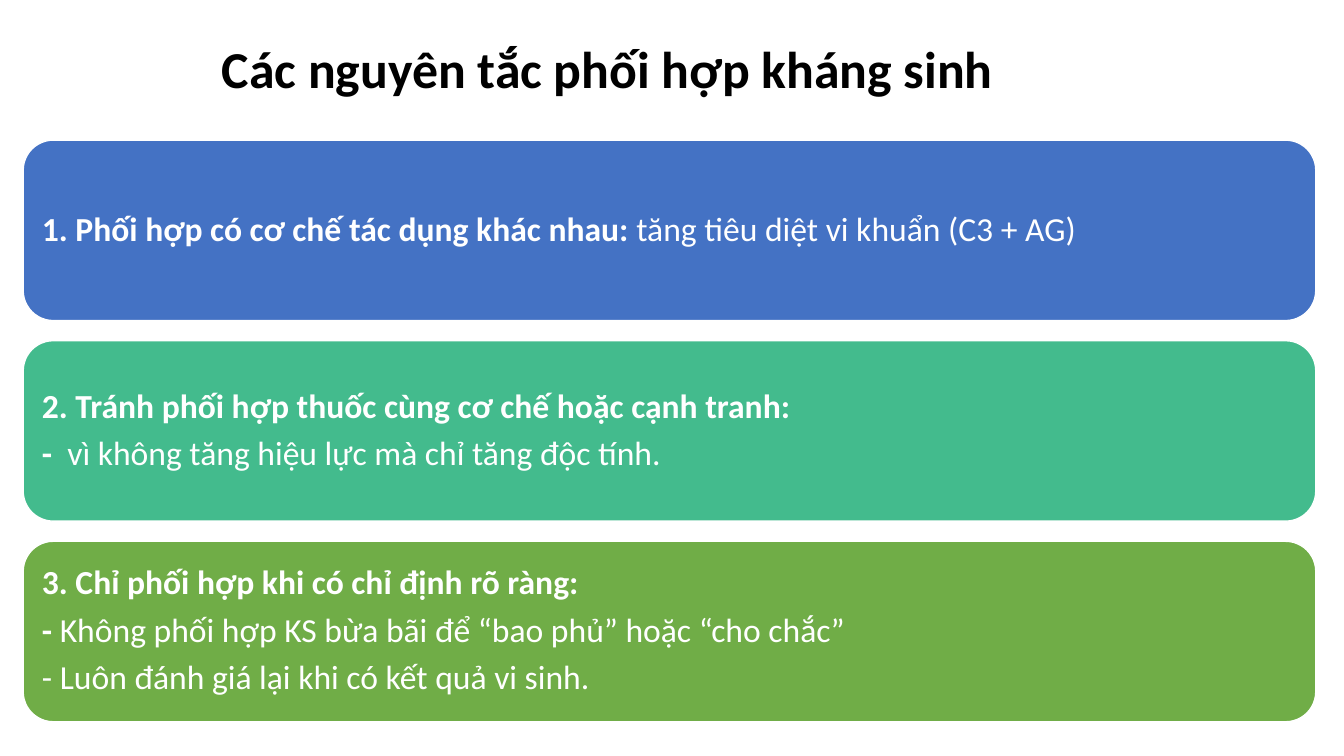
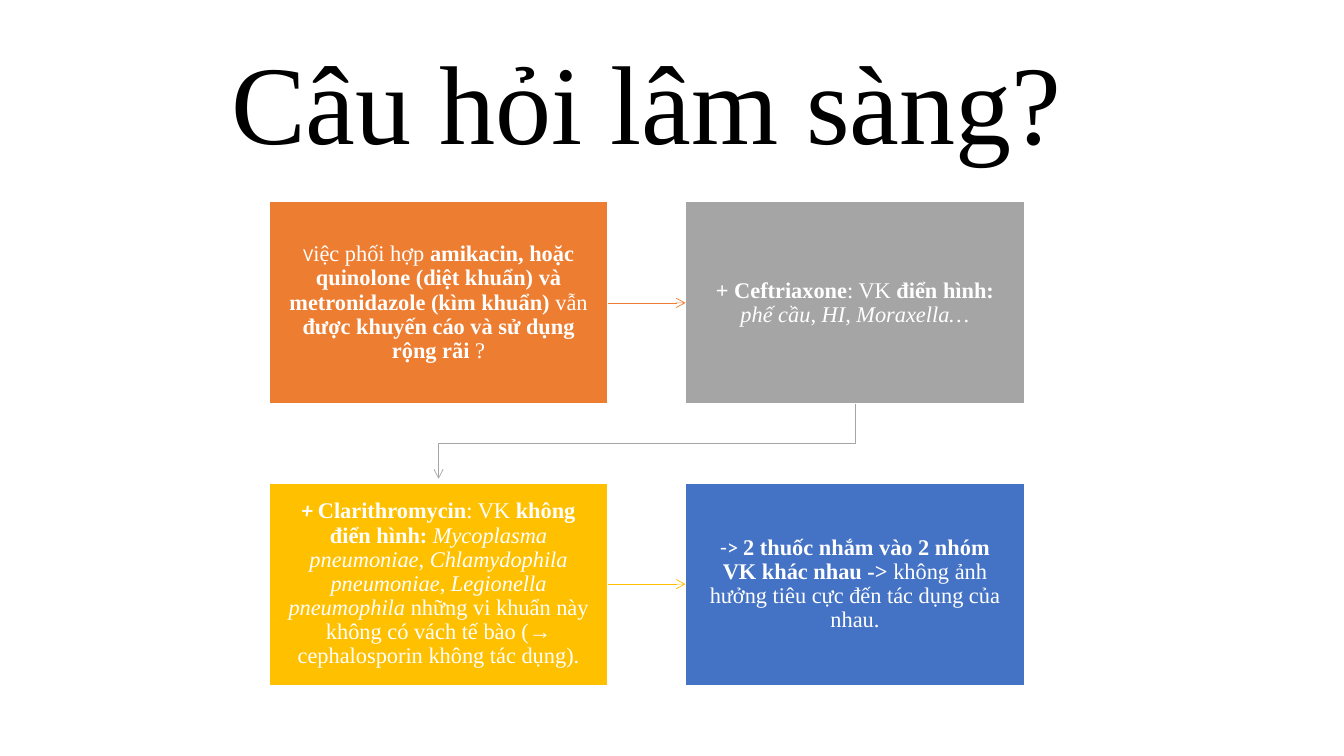
from lxml.etree import SubElement
from pptx import Presentation
from pptx.dml.color import RGBColor
from pptx.enum.shapes import MSO_CONNECTOR, MSO_SHAPE
from pptx.enum.text import MSO_ANCHOR, MSO_AUTO_SIZE, PP_ALIGN
from pptx.oxml.ns import qn
from pptx.util import Inches, Pt

COLORS = {
    "black": "000000",
    "white": "FFFFFF",
    "blue": "4472C4",
    "teal": "43BB8D",
    "green": "70AD47",
    "orange": "ED7D31",
    "gray": "A5A5A5",
    "gold": "FFC000",
}
SANS = "Calibri"
SERIF = "Times New Roman"
LINE_SPACING = 0.9


def color(name):
    return RGBColor.from_string(COLORS[name])


class Deck:
    def __init__(self):
        self.prs = Presentation()
        self.prs.slide_width = Inches(13.33)
        self.prs.slide_height = Inches(7.5)
        self.s = None

    def add_slide(self):
        self.s = self.prs.slides.add_slide(self.prs.slide_layouts[5])

    def style_run(self, r, font, size, name, bold=False, italic=False):
        r.font.name = font
        r.font.size = Pt(size)
        r.font.color.rgb = color(name)
        r.font.bold = bold
        r.font.italic = italic

    def title(self, text, box, font, size, bold=False,
              align=PP_ALIGN.CENTER, anchor=MSO_ANCHOR.MIDDLE):
        sp = self.s.shapes.title
        sp.left, sp.top, sp.width, sp.height = map(Inches, box)
        tf = sp.text_frame
        tf.text = text
        tf.word_wrap = True
        tf.auto_size = MSO_AUTO_SIZE.NONE
        tf.vertical_anchor = anchor
        p = tf.paragraphs[0]
        p.alignment = align
        p.line_spacing = LINE_SPACING
        self.style_run(p.runs[0], font, size, "black", bold)

    def card(self, preset, box, fill, paragraphs, font, size, align, margins):
        sp = self.s.shapes.add_shape(preset, *map(Inches, box))
        sp.shadow.inherit = False
        sp.fill.solid()
        sp.fill.fore_color.rgb = color(fill)
        sp.line.color.rgb = color("white")
        sp.line.width = Pt(1)
        tf = sp.text_frame
        tf.word_wrap = True
        tf.vertical_anchor = MSO_ANCHOR.MIDDLE
        tf.margin_left = tf.margin_right = Inches(margins[0])
        tf.margin_top = tf.margin_bottom = Inches(margins[1])
        for i, runs in enumerate(paragraphs):
            p = tf.add_paragraph() if i else tf.paragraphs[0]
            p.alignment = align
            p.line_spacing = LINE_SPACING
            p.space_after = Pt(round(size * 0.35))
            for text, flags in runs:
                r = p.add_run()
                r.text = text
                self.style_run(r, SANS if "c" in flags else font,
                               13 if "s" in flags else size,
                               "white", "b" in flags, "i" in flags)
        return sp

    def arrow_line(self, sp, name):
        sp.line.color.rgb = color(name)
        sp.line.width = Pt(0.5)
        SubElement(sp.line._get_or_add_ln(), qn("a:tailEnd"), type="arrow")

    def arrow(self, start, end, name):
        c = self.s.shapes.add_connector(MSO_CONNECTOR.STRAIGHT, 0, 0, 0, 0)
        c.begin_connect(start, 3)
        c.end_connect(end, 1)
        self.arrow_line(c, name)
        SubElement(c._element.spPr, qn("a:effectLst"))

    def path_arrow(self, points, name):
        start, *rest = [(Inches(x), Inches(y)) for x, y in points]
        builder = self.s.shapes.build_freeform(*start)
        builder.add_line_segments(rest, close=False)
        sp = builder.convert_to_shape()
        sp.fill.background()
        self.arrow_line(sp, name)
        sp.shadow.inherit = False


def principles_slide(deck):
    deck.add_slide()
    deck.title("Các nguyên tắc phối hợp kháng sinh", (2.1, 0.2, 9.13, 0.84),
               SANS, 37, True, PP_ALIGN.LEFT, MSO_ANCHOR.BOTTOM)
    principles = [
        ("blue", [[("1. Phối hợp có cơ chế tác dụng khác nhau: ", "b"),
                   ("tăng tiêu diệt vi khuẩn (C3 + AG)", "")]]),
        ("teal", [[("2. Tránh phối hợp thuốc cùng cơ chế hoặc cạnh tranh:", "b")],
                  [("-  ", "b"),
                   ("vì không tăng hiệu lực mà chỉ tăng độc tính.", "")]]),
        ("green", [[("3. Chỉ phối hợp khi có chỉ định rõ ràng:", "b")],
                   [("- ", "b"),
                    ("Không phối hợp KS bừa bãi để “bao phủ” hoặc “cho chắc”", "")],
                   [("- Luôn đánh giá lại khi có kết quả vi sinh.", "")]]),
    ]
    top, height, gap = 1.39, 1.79, 0.2
    for i, (fill, paragraphs) in enumerate(principles):
        box = (0.23, top + i * (height + gap), 12.82, height)
        deck.card(MSO_SHAPE.ROUNDED_RECTANGLE, box, fill, paragraphs,
                  SANS, 24, PP_ALIGN.LEFT, (0.1, 0.1))


def question_slide(deck):
    deck.add_slide()
    deck.title("Câu hỏi lâm sàng?", (1.3, 0.42, 10.23, 1.31), SERIF, 80)
    steps = [
        ("orange", [("V", "cs"), ("iệc phối hợp ", ""),
                    ("amikacin, hoặc quinolone (diệt khuẩn) và "
                     "metronidazole (kìm khuẩn)", "b"),
                    (" vẫn ", ""),
                    ("được khuyến cáo và sử dụng rộng rãi", "b"),
                    (" ?", "")]),
        ("gray", [("+ Ceftriaxone", "b"), (": VK ", ""),
                  ("điển hình: ", "b"), ("phế cầu, HI, Moraxella…", "i")]),
        ("gold", [("+ ", "cbi"), ("Clarithromycin", "b"), (": VK ", ""),
                  ("không điển hình: ", "b"),
                  ("Mycoplasma pneumoniae", "i"), (", ", ""),
                  ("Chlamydophila pneumoniae", "i"), (", ", ""),
                  ("Legionella pneumophila ", "i"),
                  ("những vi khuẩn này không có vách tế bào "
                   "(→ cephalosporin không tác dụng).", "")]),
        ("blue", [("-> ", "c"),
                  ("2 thuốc nhắm vào 2 nhóm VK khác nhau ->", "b"),
                  (" không ảnh hưởng tiêu cực đến tác dụng của nhau.", "")]),
    ]
    left, top, width, height = 2.67, 2, 3.36, 2.01
    col_step, row_step = 4.13, 2.79
    cards = []
    for i, (fill, runs) in enumerate(steps):
        row, col = divmod(i, 2)
        box = (left + col * col_step, top + row * row_step, width, height)
        cards.append(deck.card(MSO_SHAPE.RECTANGLE, box, fill, [runs],
                               SERIF, 16, PP_ALIGN.CENTER, (0.16, 0.17)))
    deck.arrow(cards[0], cards[1], "orange")
    deck.arrow(cards[2], cards[3], "gold")
    first_x = left + width / 2
    second_x = first_x + col_step
    bottom = top + height
    turn = bottom + (row_step - height) / 2
    tip = top + row_step - 0.04
    deck.path_arrow([(second_x, bottom), (second_x, turn),
                     (first_x, turn), (first_x, tip)], "gray")


def main():
    deck = Deck()
    principles_slide(deck)
    question_slide(deck)
    deck.prs.save("out.pptx")


if __name__ == "__main__":
    main()
